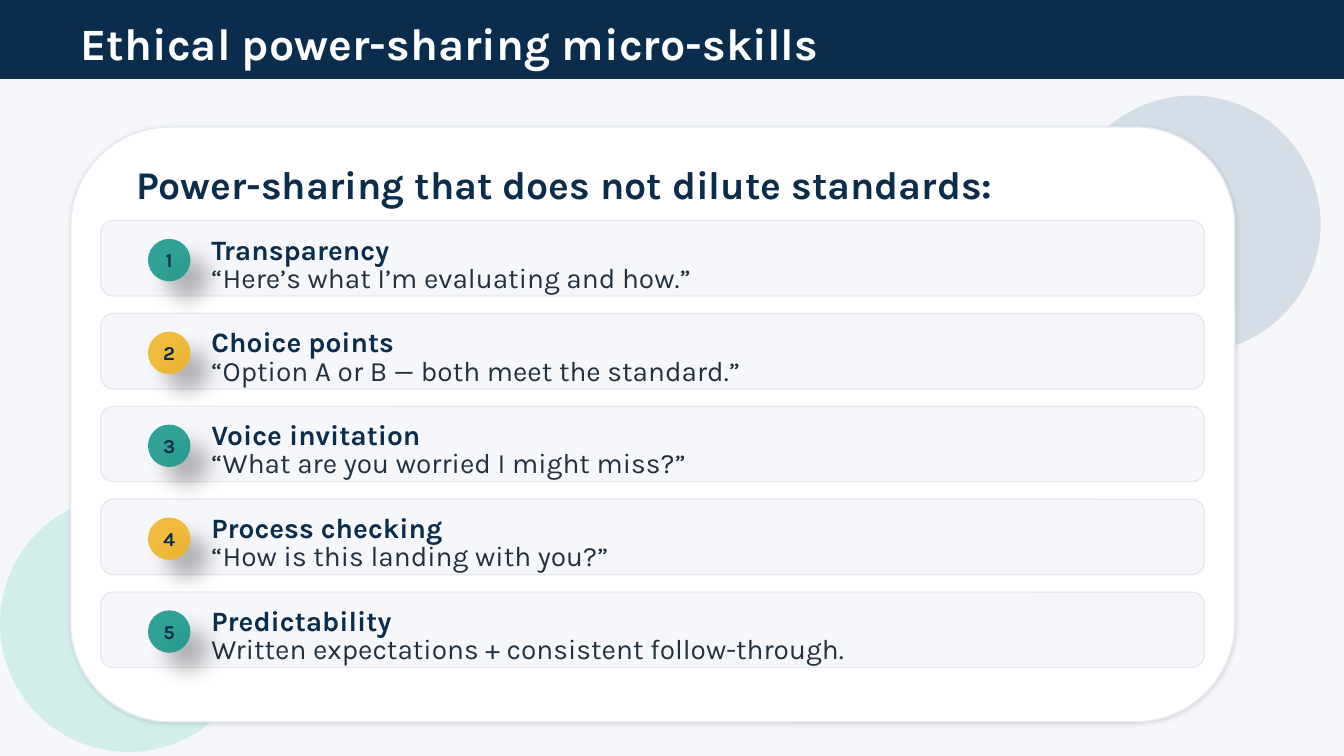
from dataclasses import dataclass

from lxml import etree
from pptx import Presentation
from pptx import util as u
from pptx.dml.color import RGBColor
from pptx.enum import shapes, text
from pptx.oxml.ns import qn


@dataclass(frozen=True)
class Theme:
    font: str = "Karla"
    navy: str = "0B2D4D"
    ink: str = "23313F"
    white: str = "FFFFFF"
    mist: str = "F5F7FA"
    border: str = "E6EAF0"
    teal: str = "1B998B"
    amber: str = "F0B429"
    mint: str = "BFEAE3"
    steel: str = "AFC1D0"
    title_size: int = 32
    heading_size: int = 28
    body_size: int = 20
    badge_size: int = 14


@dataclass(frozen=True)
class Shadow:
    """Black shadow: opacity in percent, blur and distance in points."""
    opacity: float
    blur: float
    distance: float
    angle: int = 45


CARD_SHADOW = Shadow(15, 3, 1.2)
BADGE_SHADOW = Shadow(30, 15, 18)
OVAL = shapes.MSO_SHAPE.OVAL
RECTANGLE = shapes.MSO_SHAPE.RECTANGLE
ROUNDED = shapes.MSO_SHAPE.ROUNDED_RECTANGLE

SKILLS = [
    ("Transparency", "“Here’s what I’m evaluating and how.”"),
    ("Choice points", "“Option A or B — both meet the standard.”"),
    ("Voice invitation", "“What are you worried I might miss?”"),
    ("Process checking", "“How is this landing with you?”"),
    ("Predictability", "Written expectations + consistent follow-through."),
]
ROW_TOP, ROW_PITCH = 5.56, 2.34


def set_alpha(color_element, percent):
    alpha = etree.SubElement(color_element, qn("a:alpha"))
    alpha.set("val", str(round(percent * 1000)))


class SlideBuilder:
    """Draws on one slide; every box is (left, top, width, height) in cm."""

    def __init__(self, slide, theme):
        self.slide = slide
        self.theme = theme

    def background(self, color):
        fill = self.slide.background.fill
        fill.solid()
        fill.fore_color.rgb = RGBColor.from_string(color)

    def panel(self, kind, box, color, border=None, opacity=100, shadow=None, parent=None):
        target = parent or self.slide
        panel = target.shapes.add_shape(kind, *map(u.Cm, box))
        panel.shadow.inherit = False
        panel.fill.solid()
        panel.fill.fore_color.rgb = RGBColor.from_string(color)
        if opacity < 100:
            set_alpha(panel._element.spPr.find(qn("a:solidFill"))[0], opacity)
        if border:
            panel.line.color.rgb = RGBColor.from_string(border)
            panel.line.width = u.Pt(1)
        else:
            panel.line.fill.background()
        if shadow:
            self.cast(panel, shadow)

    def cast(self, panel, shadow):
        effects = panel._element.spPr.find(qn("a:effectLst"))
        outer = etree.SubElement(effects, qn("a:outerShdw"))
        settings = {
            "blurRad": u.Pt(shadow.blur),
            "dist": u.Pt(shadow.distance),
            "dir": shadow.angle * 60000,
            "algn": "bl",
            "rotWithShape": 0,
        }
        for key, value in settings.items():
            outer.set(key, str(value))
        black = etree.SubElement(outer, qn("a:srgbClr"), val="000000")
        set_alpha(black, shadow.opacity)

    def label(self, words, box, size, color, bold=True, align=None, parent=None):
        target = parent or self.slide
        frame = target.shapes.add_textbox(*map(u.Cm, box)).text_frame
        frame.word_wrap = True
        frame.vertical_anchor = text.MSO_ANCHOR.MIDDLE
        paragraph = frame.paragraphs[0]
        paragraph.alignment = align
        run = paragraph.add_run()
        run.text = words
        font_format = {"name": self.theme.font, "size": u.Pt(size), "bold": bold}
        for key, value in font_format.items():
            setattr(run.font, key, value)
        run.font.color.rgb = RGBColor.from_string(color)

    def skill(self, number, name, phrase):
        theme = self.theme
        top = ROW_TOP + (number - 1) * ROW_PITCH
        self.panel(ROUNDED, (2.54, top, 27.81, 1.9), theme.mist, theme.border)

        item = self.slide.shapes.add_group_shape()
        badge = (3.73, top + 0.46, 1.07, 1.07)
        badge_color = theme.teal if number % 2 else theme.amber
        self.panel(OVAL, badge, badge_color, opacity=90, shadow=BADGE_SHADOW, parent=item)
        self.label(str(number), badge, theme.badge_size, theme.navy,
                   align=text.PP_ALIGN.CENTER, parent=item)
        self.label(name, (5.08, top + 0.33, 7.62, 0.76), theme.body_size, theme.navy,
                   parent=item)
        self.label(phrase, (5.08, top + 1.04, 25.91, 0.76), theme.body_size, theme.ink,
                   bold=False, parent=item)


def main():
    deck = Presentation()
    deck.slide_width, deck.slide_height = u.Cm(33.87), u.Cm(19.05)
    theme = Theme()
    page = SlideBuilder(deck.slides.add_slide(deck.slide_layouts[6]), theme)

    page.background(theme.mist)
    page.panel(OVAL, (0, 12.47, 6.48, 6.48), theme.mint, opacity=65)
    page.panel(OVAL, (26.8, 2.41, 6.48, 6.48), theme.steel, opacity=45)

    page.panel(RECTANGLE, (0, 0, 33.87, 1.98), theme.navy, theme.navy)
    page.label("Ethical power-sharing micro-skills", (1.78, 0.43, 30.23, 1.27),
               theme.title_size, theme.white)

    page.panel(ROUNDED, (1.78, 3.2, 29.34, 14.99), theme.white, theme.border,
               shadow=CARD_SHADOW)
    page.label("Power-sharing that does not dilute standards:", (3.18, 4.19, 27.69, 0.89),
               theme.heading_size, theme.navy)
    for number, (name, phrase) in enumerate(SKILLS, start=1):
        page.skill(number, name, phrase)

    deck.save("out.pptx")


if __name__ == "__main__":
    main()
